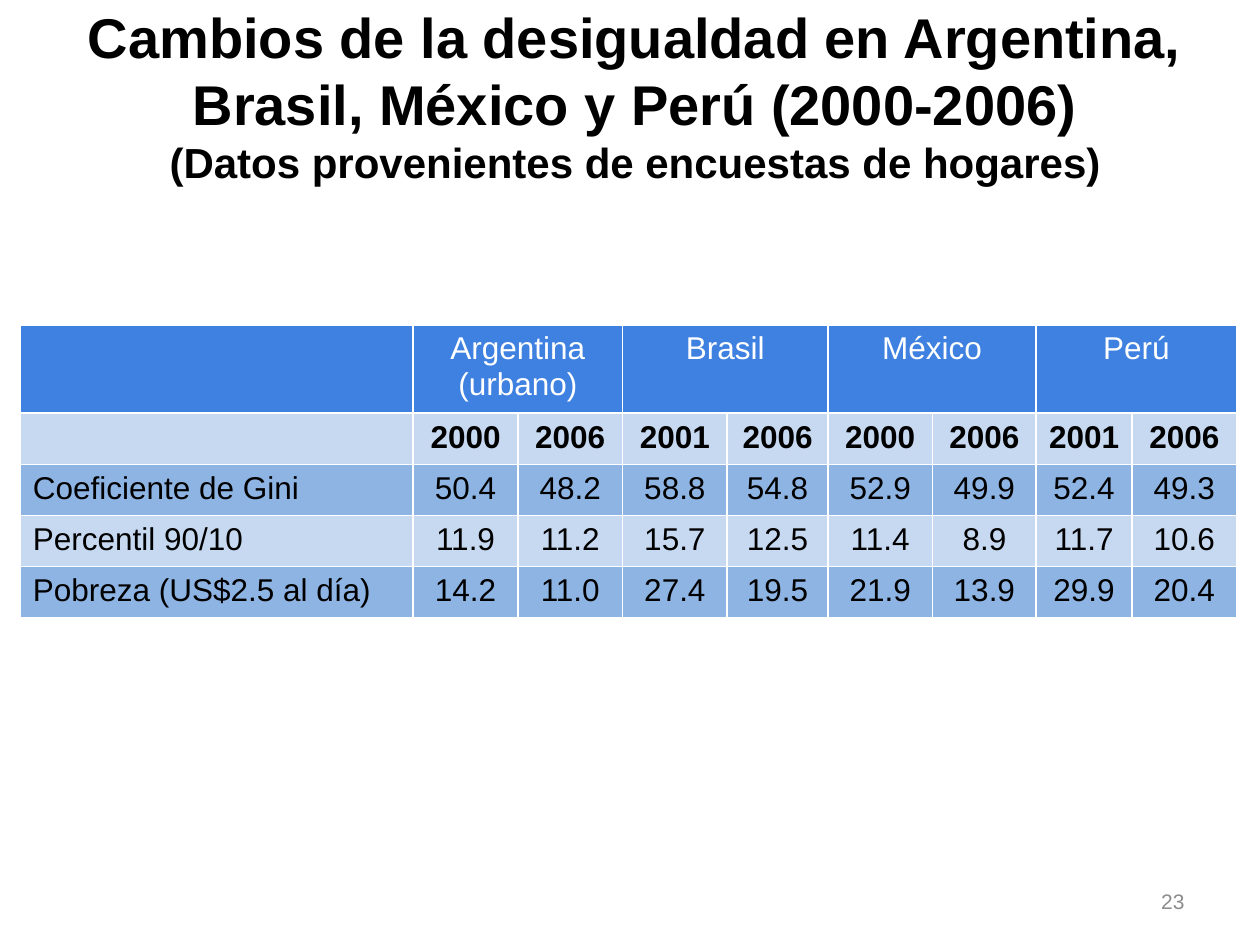
from lxml import etree
from pptx import Presentation
from pptx.dml.color import RGBColor
from pptx.enum.text import MSO_ANCHOR as Anchor, MSO_AUTO_SIZE as AutoSize, PP_ALIGN as Align
from pptx.oxml.ns import qn
from pptx.util import Cm, Pt


def add_text(para, text, size, color, bold=False):
    span = para.add_run()
    span.text = text
    values = {"name": "Arial", "size": Pt(size), "bold": bold}
    for key, value in values.items():
        setattr(span.font, key, value)
    span.font.color.rgb = RGBColor.from_string(color)


def paint_cell(cell, color):
    props = cell._tc.get_or_add_tcPr()
    for side in ("lnL", "lnR", "lnT", "lnB"):
        line = etree.SubElement(props, qn(f"a:{side}"), w=str(Pt(1)))
        solid = etree.SubElement(line, qn("a:solidFill"))
        etree.SubElement(solid, qn("a:srgbClr"), val="FFFFFF")
    cell.fill.solid()
    cell.fill.fore_color.rgb = RGBColor.from_string(color)


deck = Presentation()
deck.slide_width, deck.slide_height = Cm(25.4), Cm(19.05)
page = deck.slides.add_slide(deck.slide_layouts[5])

title = page.shapes.title
place = {"left": Cm(0.64), "top": Cm(0), "width": Cm(24.33), "height": Cm(3.81)}
for key, value in place.items():
    setattr(title, key, value)
frame = title.text_frame
frame.auto_size = AutoSize.NONE
frame.vertical_anchor = Anchor.MIDDLE
para = frame.paragraphs[0]
para.alignment = Align.CENTER
add_text(para, "Cambios de la desigualdad en Argentina, Brasil, México y Perú (2000-2006)", 32, "000000", True)
para.add_line_break()
add_text(para, "(Datos provenientes de encuestas de hogares)", 24, "000000", True)

number_box = page.shapes.add_textbox(Cm(18.2), Cm(17.65), Cm(5.93), Cm(1.02))
frame = number_box.text_frame
frame.word_wrap = True
frame.vertical_anchor = Anchor.MIDDLE
para = frame.paragraphs[0]
para.alignment = Align.RIGHT
add_text(para, "23", 12, "8C8C8C")

rows = [
    ["", "Argentina (urbano)", "", "Brasil", "", "México", "", "Perú", ""],
    ["", "2000", "2006", "2001", "2006", "2000", "2006", "2001", "2006"],
    ["Coeficiente de Gini", "50.4", "48.2", "58.8", "54.8", "52.9", "49.9", "52.4", "49.3"],
    ["Percentil 90/10", "11.9", "11.2", "15.7", "12.5", "11.4", "8.9", "11.7", "10.6"],
    ["Pobreza (US$2.5 al día)", "14.2", "11.0", "27.4", "19.5", "21.9", "13.9", "29.9", "20.4"],
]
row_fills = ["3F81E1", "C6D9F1", "8EB4E3", "C6D9F1", "8EB4E3"]
widths = [7.92, 2.11, 2.11, 2.11, 2.03, 2.11, 2.09, 1.93, 2.11]
heights = [1.67] + [1.03] * 4

table = page.shapes.add_table(
    len(rows), len(widths), Cm(0.41), Cm(6.55), Cm(sum(widths)), Cm(sum(heights))
).table
for column, width in zip(table.columns, widths):
    column.width = Cm(width)
for row, height in zip(table.rows, heights):
    row.height = Cm(height)
for first in range(1, len(widths), 2):
    table.cell(0, first).merge(table.cell(0, first + 1))

for r, (texts, fill) in enumerate(zip(rows, row_fills)):
    for c, text in enumerate(texts):
        cell = table.cell(r, c)
        paint_cell(cell, fill)
        if text:
            para = cell.text_frame.paragraphs[0]
            para.alignment = Align.CENTER if c else Align.LEFT
            add_text(para, text, 18, "000000" if r else "FFFFFF", r == 1)

deck.save("out.pptx")
